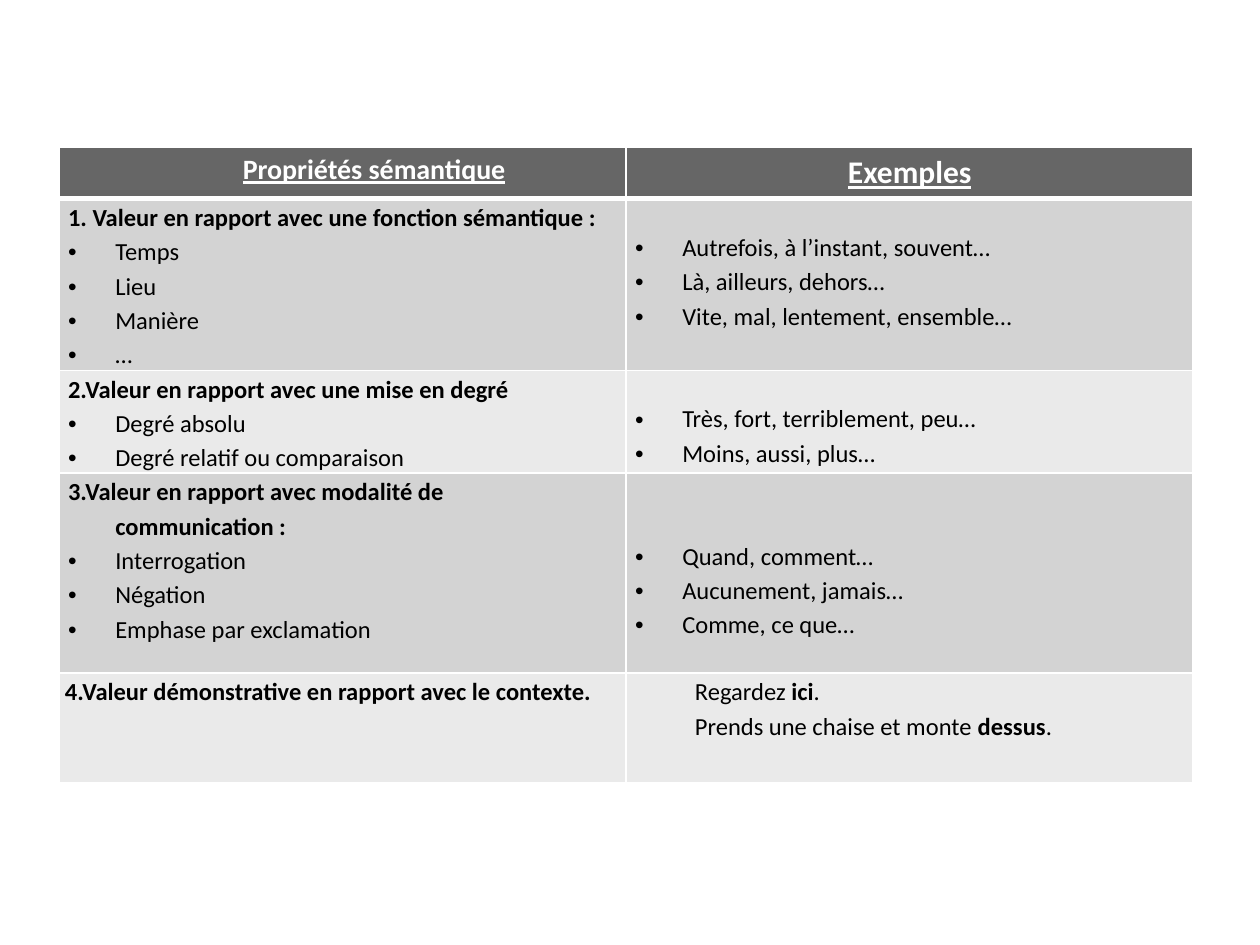
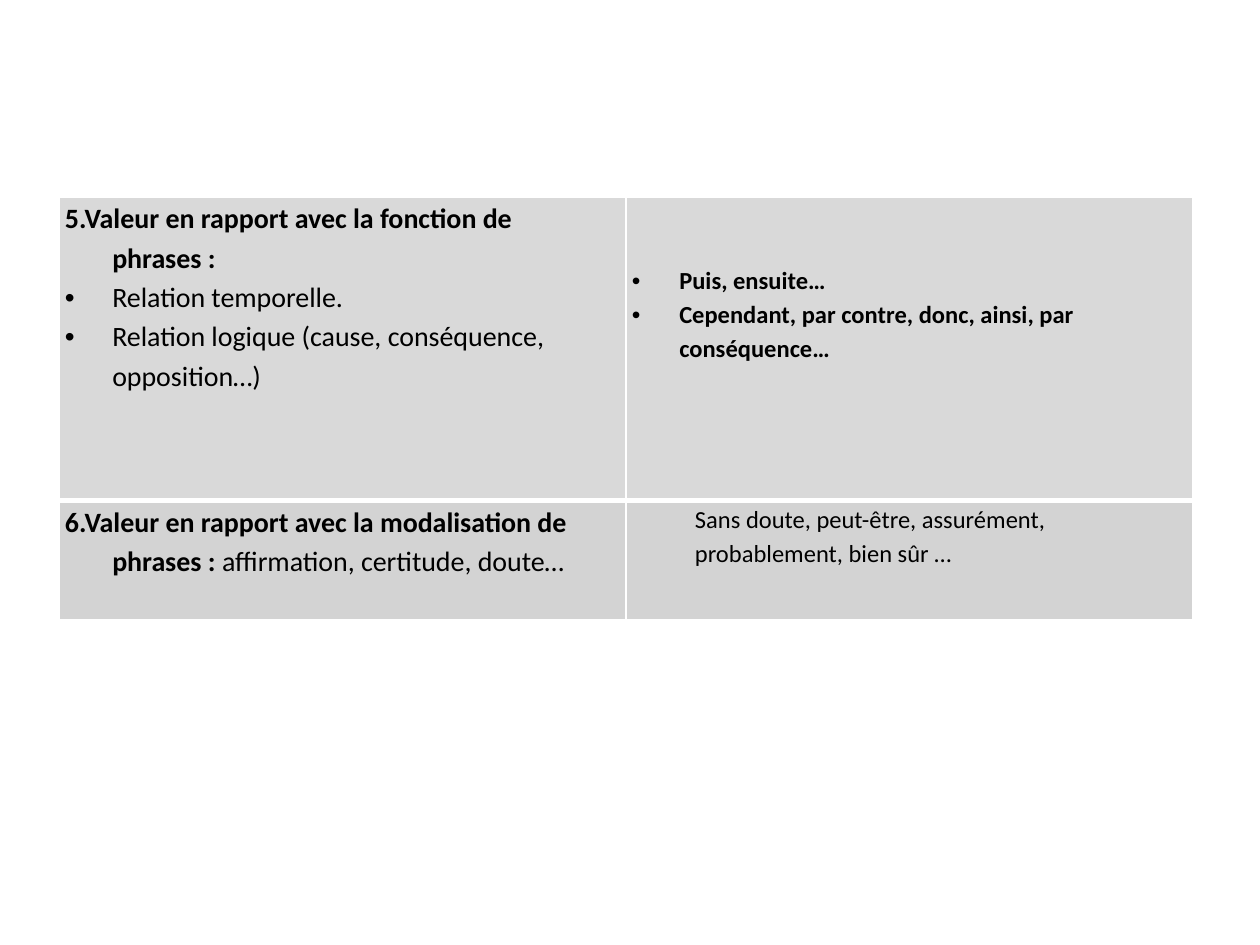
from dataclasses import dataclass

from lxml import etree
from pptx import Presentation
from pptx import util as u
from pptx.dml.color import RGBColor
from pptx.enum import text as t
from pptx.oxml import ns

Pt = u.Pt


@dataclass(frozen=True)
class Theme:
    font: str = "Calibri"
    white: str = "FFFFFF"
    ink: str = "000000"
    dark: str = "666666"
    mid: str = "D3D3D3"
    light: str = "EAEAEA"
    pale: str = "D9D9D9"
    small: int = 14
    large: int = 16
    huge: int = 18
    lead: float = 1.15
    thin: int = 1
    thick: int = 3


THEME = Theme()
LEFT, WIDTH = 33.84, 648
HANG, INDENT = 27, 36
WIDE, SLIM = 5.04, 3.3  # side margins of cells
ONE, TWO = 17.1, 36.7  # top margins that skip one or two lines


def put(obj, **values):
    for name, value in values.items():
        setattr(obj, name, value)


def edge(cell, side, width):
    props = cell._tc.get_or_add_tcPr()
    line = etree.SubElement(props, ns.qn(f"a:ln{side}"), w=str(Pt(width)))
    fill = etree.SubElement(line, ns.qn("a:solidFill"))
    etree.SubElement(fill, ns.qn("a:srgbClr"), val=THEME.white)


def indent(para, left, first=0, bullet=False):
    props = para._p.get_or_add_pPr()
    props.set("marL", str(Pt(left)))
    props.set("indent", str(Pt(first)))
    if bullet:
        etree.SubElement(props, ns.qn("a:buFont"), typeface="Arial")
        etree.SubElement(props, ns.qn("a:buChar"), char="•")
    else:
        etree.SubElement(props, ns.qn("a:buNone"))


def write(para, words, **look):
    """Add runs; words between asterisks are bold."""
    for pos, part in enumerate(words.split("*")):
        if part:
            run = para.add_run()
            run.text = part
            style = {"name": THEME.font, "bold": pos % 2 == 1, "color": THEME.ink} | look
            run.font.color.rgb = RGBColor.from_string(style.pop("color"))
            put(run.font, **style)


def frame(cell, fill, side, top=0, bottom=0):
    put(cell, margin_left=Pt(side), margin_right=Pt(side),
        margin_top=Pt(top), margin_bottom=Pt(bottom))
    cell.fill.solid()
    cell.fill.fore_color.rgb = RGBColor.from_string(fill)


def fill_cell(cell, lines, fill, side, size, top=0):
    """Lines start with '- ' for a bullet, '> ' for an indent, else they hang."""
    frame(cell, fill, side, top)
    for pos, line in enumerate(lines):
        para = cell.text_frame.paragraphs[0] if pos == 0 else cell.text_frame.add_paragraph()
        if line.startswith("> "):
            indent(para, INDENT)
        else:
            indent(para, HANG, -HANG, line.startswith("- "))
        para.line_spacing = THEME.lead
        write(para, line.removeprefix("- ").removeprefix("> "), size=Pt(size))


def fill_head(cell, words, size, left=0, lead=1.0, **box):
    frame(cell, THEME.dark, **box)
    para = cell.text_frame.paragraphs[0]
    indent(para, left)
    put(para, alignment=t.PP_ALIGN.CENTER, line_spacing=lead)
    write(para, words, size=Pt(size), bold=True, underline=True, color=THEME.white)


def add_grid(deck, top, heights, head):
    """Add a slide with a two-column table, ruled heavily under its first row."""
    slide = deck.slides.add_slide(deck.slide_layouts[6])
    grid = slide.shapes.add_table(len(heights), 2, Pt(LEFT), Pt(top),
                                  Pt(WIDTH), Pt(sum(heights))).table
    put(grid, first_row=head, horz_banding=False)
    for pos, height in enumerate(heights):
        grid.rows[pos].height = Pt(height)
        for cell in grid.rows[pos].cells:
            widths = {"L": THEME.thin, "R": THEME.thin,
                      "T": THEME.thick if pos == 1 else THEME.thin,
                      "B": THEME.thick if pos == 0 else THEME.thin}
            for side, width in widths.items():
                edge(cell, side, width)
    return grid


def fill_rows(grid, rows, start, left_size):
    for pos, (fill, side, top, left, right) in enumerate(rows, start):
        fill_cell(grid.cell(pos, 0), left, fill, side, left_size)
        fill_cell(grid.cell(pos, 1), right, fill, side, THEME.small, top)


VALUES = [
    (THEME.mid, WIDE, ONE,
     ["*1. Valeur en rapport avec une fonction sémantique :*",
      "- Temps", "- Lieu", "- Manière", "- …"],
     ["- Autrefois, à l’instant, souvent…", "- Là, ailleurs, dehors…",
      "- Vite, mal, lentement, ensemble…"]),
    (THEME.light, WIDE, ONE,
     ["*2.Valeur en rapport avec une mise en degré*",
      "- Degré absolu", "- Degré relatif ou comparaison"],
     ["- Très, fort, terriblement, peu…", "- Moins, aussi, plus…"]),
    (THEME.mid, WIDE, TWO,
     ["*3.Valeur en rapport avec modalité de communication :*",
      "- Interrogation", "- Négation", "- Emphase par exclamation"],
     ["- Quand, comment…", "- Aucunement, jamais…", "- Comme, ce que…"]),
    (THEME.light, SLIM, 0,
     ["*4.Valeur démonstrative en rapport avec le contexte.*"],
     ["> Regardez *ici*.", "> Prends une chaise et monte *dessus*."]),
]

PHRASES = [
    (THEME.pale, SLIM, TWO,
     ["*5.Valeur en rapport avec la fonction de phrases :*",
      "- Relation temporelle.",
      "- Relation logique (cause, conséquence, opposition…)"],
     ["- *Puis, ensuite…*",
      "- *Cependant, par contre, donc, ainsi, par conséquence…*"]),
    (THEME.mid, SLIM, 0,
     ["*6.Valeur en rapport avec la modalisation de phrases : *"
      "affirmation, certitude, doute…"],
     ["> Sans doute, peut-être, assurément, probablement, bien sûr …"]),
]


def main():
    deck = Presentation()
    put(deck, slide_width=Pt(720), slide_height=Pt(540))

    grid = add_grid(deck, 84.4, [29.2, 98, 58.8, 114.3, 62.4], True)
    fill_head(grid.cell(0, 0), "Propriétés sémantique", THEME.large,
              INDENT, THEME.lead, side=WIDE)
    fill_head(grid.cell(0, 1), "Exemples", THEME.huge, side=7.2, top=3.6, bottom=3.6)
    fill_rows(grid, VALUES, 1, THEME.small)

    grid = add_grid(deck, 112.6, [173.5, 68], False)
    fill_rows(grid, PHRASES, 0, THEME.large)

    deck.save("out.pptx")


if __name__ == "__main__":
    main()
